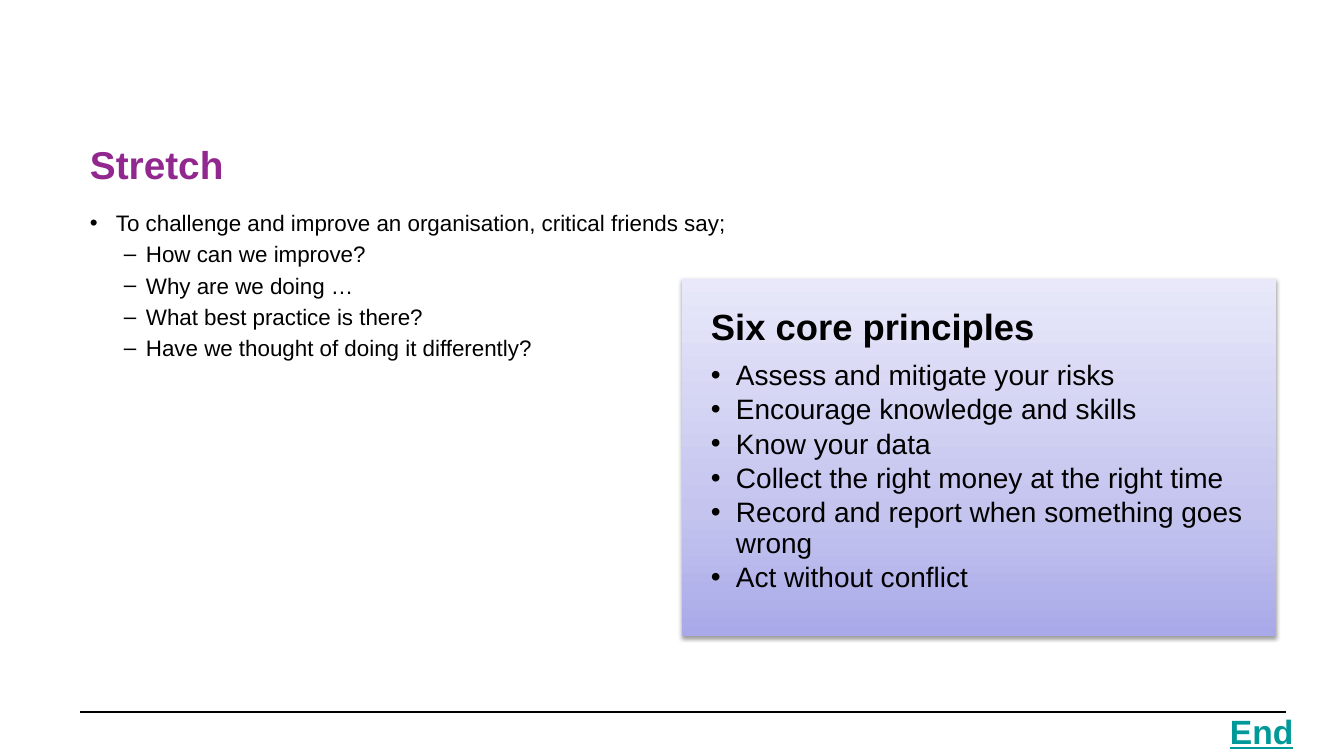
from pptx import Presentation
from pptx.dml.color import RGBColor as RGB
from pptx.enum.shapes import MSO_CONNECTOR as LINE, MSO_SHAPE as SHAPE
from pptx.enum.text import MSO_ANCHOR as ANCHOR, PP_ALIGN as ALIGN
from pptx.oxml import parse_xml
from pptx.oxml.ns import nsdecls
from pptx.util import Pt

PX = 914400 / 100.8
INK = {"text": "000000", "title": "91278F", "end": "009999",
       "low": "A9A9E9", "mid": "C4C4EF", "high": "E8E8FA"}
ASKS = ["How can we improve?", "Why are we doing …",
        "What best practice is there?", "Have we thought of doing it differently?"]
RULES = ["Assess and mitigate your risks", "Encourage knowledge and skills",
         "Know your data", "Collect the right money at the right time",
         "Record and report when something goes wrong", "Act without conflict"]


def px(num):
    """Turn px into EMU."""
    return round(num * PX)


def xml(tag, body):
    """Build one drawing element from its tag and the rest of its markup."""
    return parse_xml(f"<a:{tag} {nsdecls('a')}{body}")


def write(frame, rows, margin=(10, 5)):
    """Fill a text frame with (text, font, layout) rows."""
    frame.word_wrap = True
    side, edge = margin
    form = {"margin_left": side, "margin_right": side,
            "margin_top": edge, "margin_bottom": edge}
    for key, val in form.items():
        setattr(frame, key, px(val))
    for idx, (text, font, lay) in enumerate(rows):
        para = frame.add_paragraph() if idx else frame.paragraphs[0]
        para.alignment = ALIGN.LEFT
        if "line" in lay:
            para.line_spacing = lay["line"]
        props = para._p.get_or_add_pPr()
        for tag in ("spcBef", "spcAft"):
            if tag in lay:
                props.append(xml(tag, f'><a:spcPct val="{lay[tag] * 1000}"/></a:{tag}>'))
        if "mark" in lay:
            left, hang = lay["dent"]
            props.set("marL", str(px(left)))
            props.set("indent", str(px(-hang)))
            props.append(xml("buFont", ' typeface="Arial"/>'))
            props.append(xml("buChar", f' char="{lay["mark"]}"/>'))
        run = para.add_run()
        run.text = text
        look = {"name": "Arial", "bold": False, **font}
        run.font.color.rgb = RGB.from_string(INK[look.pop("ink", "text")])
        for key, val in look.items():
            setattr(run.font, key, val)


def label(slide, box, rows):
    """Add a text box with its rows and return its frame."""
    frame = slide.shapes.add_textbox(*map(px, box)).text_frame
    write(frame, rows)
    return frame


def title(slide, box):
    """Draw the slide title."""
    font = {"size": Pt(27.7), "bold": True, "ink": "title"}
    label(slide, box, [("Stretch", font, {})]).vertical_anchor = ANCHOR.MIDDLE


def body(slide, box):
    """Draw the questions that critical friends ask."""
    font = {"size": Pt(16)}
    head = ("To challenge and improve an organisation, critical friends say;",
            font, {"mark": "•", "dent": (26, 26)})
    lay = {"mark": "–", "dent": (56, 22), "spcBef": 20}
    label(slide, box, [head] + [(ask, font, lay) for ask in ASKS])


def panel(slide, box):
    """Draw the shaded panel of core principles."""
    card = slide.shapes.add_shape(SHAPE.RECTANGLE, *map(px, box))
    card.line.fill.background()
    stops = "".join(f'<a:gs pos="{pos}000"><a:srgbClr val="{INK[ink]}"/></a:gs>'
                    for pos, ink in ((0, "low"), (35, "mid"), (100, "high")))
    props = card._element.spPr
    props.insert(2, xml("gradFill", f' rotWithShape="1"><a:gsLst>{stops}</a:gsLst>'
                        '<a:lin ang="16200000" scaled="0"/></a:gradFill>'))
    props.append(xml("effectLst", '><a:outerShdw blurRad="40000" dist="20000" '
                     'dir="5400000" rotWithShape="0"><a:srgbClr val="000000">'
                     '<a:alpha val="38000"/></a:srgbClr></a:outerShdw></a:effectLst>'))
    head = ("Six core principles", {"size": Pt(26), "bold": True},
            {"line": 0.9, "spcAft": 35})
    lay = {"line": 0.9, "spcAft": 15, "mark": "•", "dent": (25, 25)}
    write(card.text_frame, [head] + [(rule, {"size": Pt(20)}, lay) for rule in RULES],
          (29, 30))
    card.text_frame.vertical_anchor = ANCHOR.TOP


def footer(slide, box):
    """Draw the bottom rule and the end mark below its right tip."""
    left, top, wide, high = box
    rule = slide.shapes.add_connector(
        LINE.STRAIGHT, *map(px, (left, top, left + wide, top)))
    rule.line.color.rgb = RGB.from_string(INK["text"])
    rule.line.width = Pt(0.75)
    rule._element.spPr.append(xml("effectLst", "/>"))
    font = {"size": Pt(24), "bold": True, "underline": True, "ink": "end"}
    spot = (left + wide - 66, top - 6, 85, high)
    label(slide, spot, [("End", font, {})]).word_wrap = False


def main():
    """Build and save the slide."""
    deck = Presentation()
    deck.slide_width, deck.slide_height = px(1344), px(756)
    slide = deck.slides.add_slide(deck.slide_layouts[6])
    footer(slide, (80, 712, 1206, 50))
    title(slide, (80, 132, 1210, 64))
    body(slide, (80, 204, 1210, 472))
    panel(slide, (682, 279, 594, 357))
    deck.save("out.pptx")


if __name__ == "__main__":
    main()
